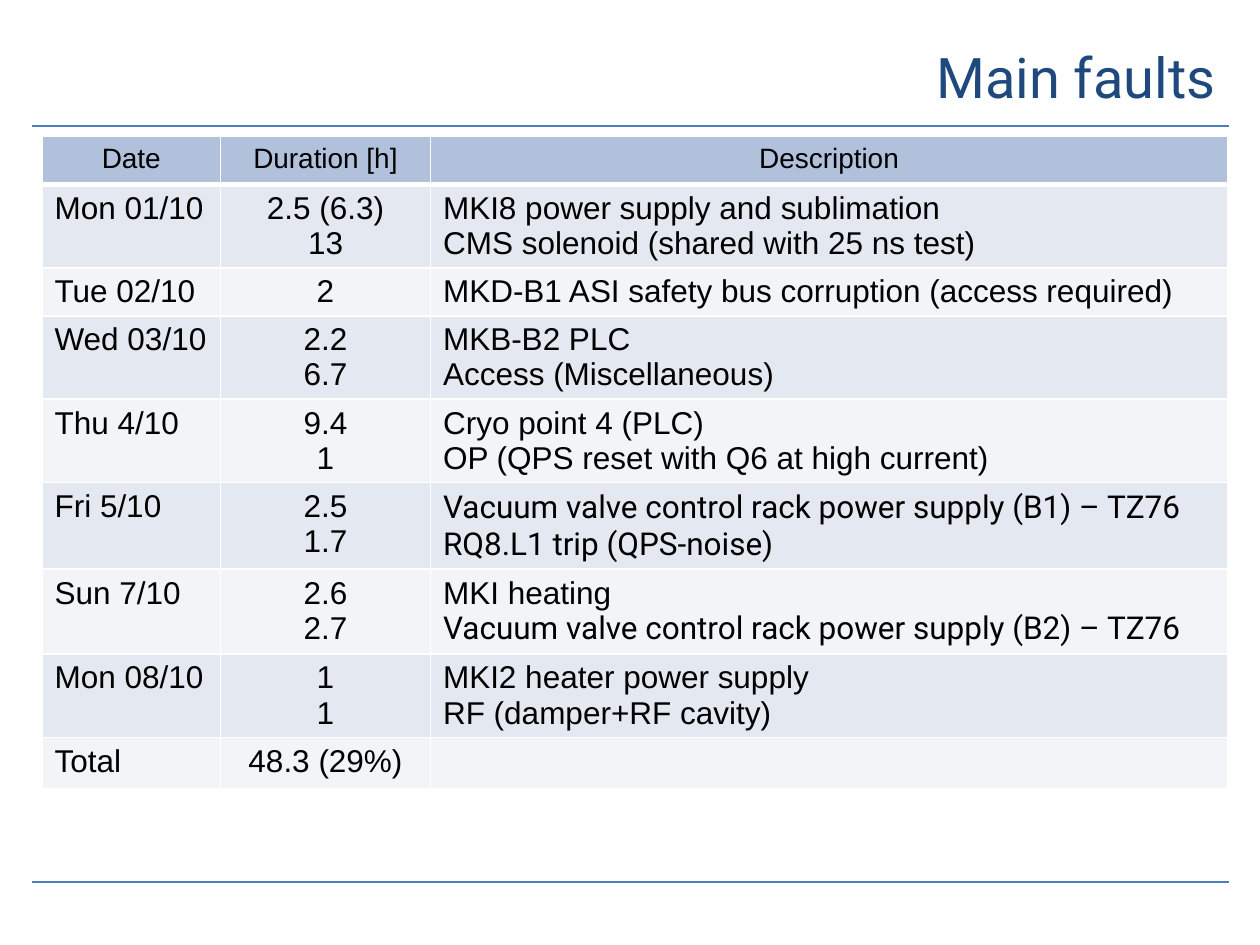
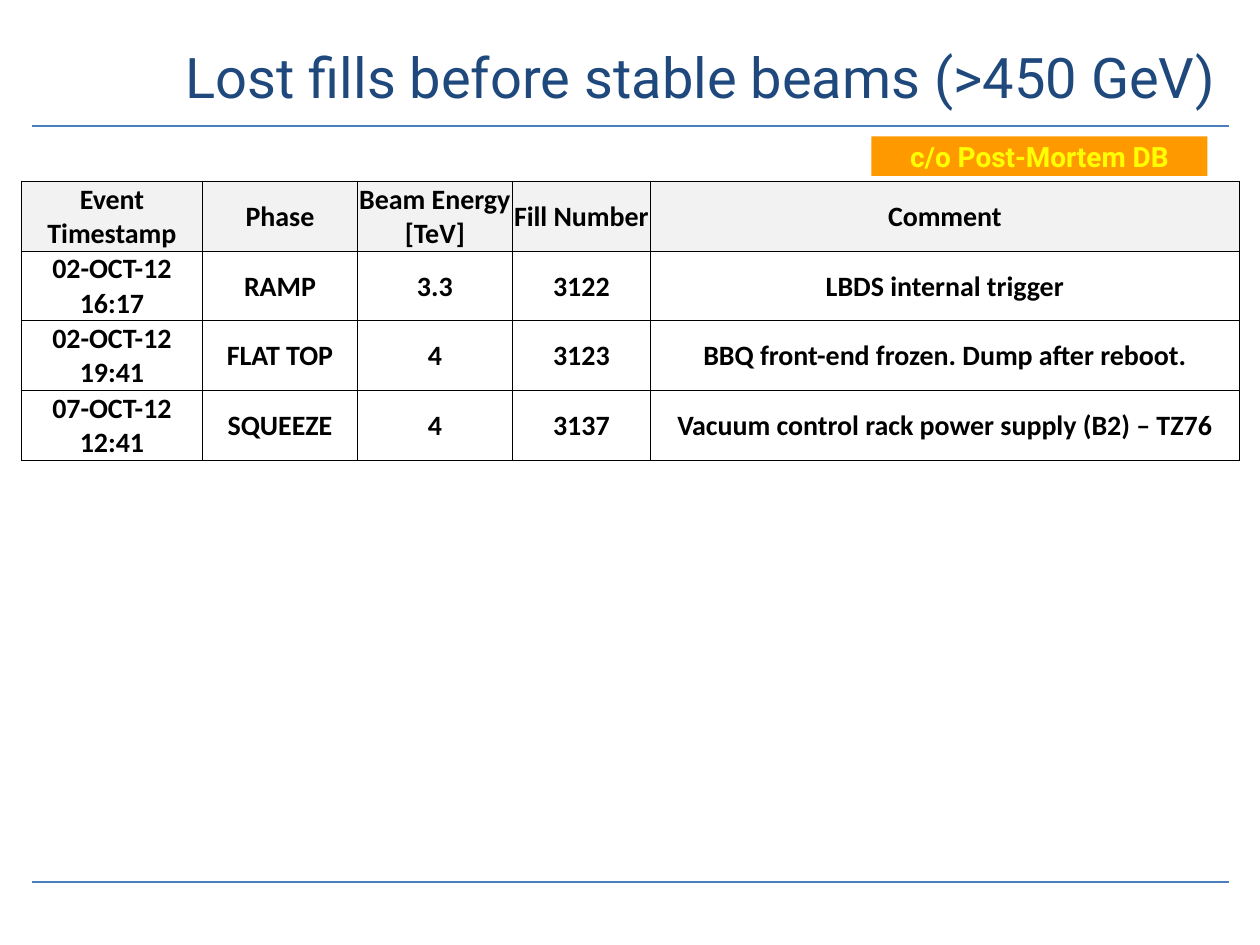
from lxml.etree import SubElement
from pptx import Presentation
from pptx.dml.color import RGBColor
from pptx.enum.shapes import MSO_CONNECTOR, MSO_SHAPE
from pptx.enum.text import MSO_ANCHOR as Anchor, PP_ALIGN as Align
from pptx.oxml import parse_xml
from pptx.oxml.ns import nsdecls, qn
from pptx.util import Pt

FAULTS = [
    ("Date", "Duration [h]", "Description"),
    ("Mon 01/10", "2.5 (6.3)\n13",
     "MKI8 power supply and sublimation\nCMS solenoid (shared with 25 ns test)"),
    ("Tue 02/10", "2", "MKD-B1 ASI safety bus corruption (access required)"),
    ("Wed 03/10", "2.2\n6.7", "MKB-B2 PLC\nAccess (Miscellaneous)"),
    ("Thu 4/10", "9.4\n1",
     "Cryo point 4 (PLC)\nOP (QPS reset with Q6 at high current)"),
    ("Fri 5/10", "2.5\n1.7",
     "Vacuum valve control rack power supply (B1) – TZ76\nRQ8.L1 trip (QPS-noise)"),
    ("Sun 7/10", "2.6\n2.7",
     "MKI heating\nVacuum valve control rack power supply (B2) – TZ76"),
    ("Mon 08/10", "1\n1", "MKI2 heater power supply\nRF (damper+RF cavity)"),
    ("Total", "48.3 (29%)", ""),
]
ROBOTO_FAULTS = ("Vacuum valve", "RQ8.L1")

LOST_FILLS = [
    ("Event Timestamp", "Phase", "Beam Energy [TeV]", "Fill Number", "Comment"),
    ("02-OCT-12 16:17", "RAMP", "3.3", "3122", "LBDS internal trigger"),
    ("02-OCT-12 19:41", "FLAT TOP", "4", "3123",
     "BBQ front-end frozen. Dump after reboot."),
    ("07-OCT-12 12:41", "SQUEEZE", "4", "3137",
     "Vacuum control rack power supply (B2) – TZ76"),
]


def rgb(hex_code):
    return RGBColor.from_string(hex_code)


class Deck:
    TITLE_COLOR, RULE_COLOR = "1F497D", "4B7EBC"
    BLACK, WHITE = "000000", "FFFFFF"
    HEADING_FONT = "Roboto"

    def __init__(self):
        self.prs = Presentation()
        self.prs.slide_width, self.prs.slide_height = Pt(720), Pt(540)
        self.slide = None

    def style(self, paragraph, font, size, color, align, bold=False):
        paragraph.alignment = align
        for run in paragraph.runs:
            run.font.name, run.font.size, run.font.bold = font, Pt(size), bold
            run.font.color.rgb = rgb(color)

    def start(self, heading, left):
        """Add a slide with its right-aligned title and the two rules."""
        self.slide = self.prs.slides.add_slide(self.prs.slide_layouts[5])
        for y in (72, 504):
            self.rule(y)
        title = self.slide.shapes.title
        title.left, title.top = Pt(left), Pt(12)
        title.width, title.height = Pt(702 - left), Pt(63)
        title.text_frame.text = heading
        title.text_frame.vertical_anchor = Anchor.MIDDLE
        self.style(title.text_frame.paragraphs[0], self.HEADING_FONT, 32,
                   self.TITLE_COLOR, Align.RIGHT)

    def rule(self, y):
        line = self.slide.shapes.add_connector(
            MSO_CONNECTOR.STRAIGHT, Pt(18), Pt(y), Pt(702), Pt(y))
        line.line.color.rgb = rgb(self.RULE_COLOR)
        line.line.width = Pt(1.5)
        SubElement(line._element.spPr, qn("a:effectLst"))

    def label(self, text, left, top, width, height, fill, color):
        box = self.slide.shapes.add_shape(
            MSO_SHAPE.RECTANGLE, Pt(left), Pt(top), Pt(width), Pt(height))
        box.shadow.inherit = False
        box.fill.solid()
        box.fill.fore_color.rgb = rgb(fill)
        box.line.fill.background()
        box.text_frame.text = text
        box.text_frame.vertical_anchor = Anchor.MIDDLE
        self.style(box.text_frame.paragraphs[0], self.HEADING_FONT, 16, color,
                   Align.CENTER, bold=True)

    def table(self, rows, left, top, widths, heights):
        frame = self.slide.shapes.add_table(
            len(rows), len(widths), Pt(left), Pt(top),
            Pt(sum(widths)), Pt(sum(heights)))
        grid = frame.table
        grid.horz_banding = False
        for column, width in zip(grid.columns, widths):
            column.width = Pt(width)
        for row, height, texts in zip(grid.rows, heights, rows):
            row.height = Pt(height)
            for cell, text in zip(row.cells, texts):
                cell.text = text
        return grid

    def paint(self, cell, fill, border, width, bottom=None):
        """Fill a cell (None for no fill) and draw its four borders."""
        if fill:
            cell.fill.solid()
            cell.fill.fore_color.rgb = rgb(fill)
        else:
            cell.fill.background()
        props = cell._tc.get_or_add_tcPr()
        for place, side in enumerate("LRTB"):
            weight = bottom if side == "B" and bottom else width
            props.insert(place, parse_xml(
                f'<a:ln{side} {nsdecls("a")} w="{Pt(weight)}"><a:solidFill>'
                f'<a:srgbClr val="{border}"/></a:solidFill></a:ln{side}>'))


def main_faults(deck):
    deck.start("Main faults", 126)
    heights = [27.4 + 20.3 * max(text.count("\n") for text in row)
               for row in FAULTS]
    grid = deck.table(FAULTS, 24, 78, (102, 120, 455.5), heights)
    for r, row in enumerate(grid.rows):
        header = r == 0
        fill = "B2C1DB" if header else ("F2F4F8", "E4E9F1")[r % 2]
        for c, cell in enumerate(row.cells):
            deck.paint(cell, fill, deck.WHITE, 1, bottom=3 if header else None)
            align = Align.CENTER if header or c == 1 else Align.LEFT
            for line in cell.text_frame.paragraphs:
                font = "Roboto" if line.text.startswith(ROBOTO_FAULTS) else "Arial"
                deck.style(line, font, 16 if header else 18, deck.BLACK, align)


def lost_fills(deck):
    deck.start("Lost fills before stable beams (>450 GeV)", 60)
    grid = deck.table(LOST_FILLS, 12.25, 103.5, (103.5, 88.5, 88.5, 79, 336.5),
                      [39.9] * len(LOST_FILLS))
    for r, row in enumerate(grid.rows):
        for cell in row.cells:
            deck.paint(cell, None if r else "F2F2F2", deck.BLACK, 0.5)
            cell.vertical_anchor = Anchor.MIDDLE
            cell.margin_left = cell.margin_right = cell.margin_top = Pt(0.7)
            cell.margin_bottom = Pt(0)
            deck.style(cell.text_frame.paragraphs[0], "Calibri", 16, deck.BLACK,
                       Align.CENTER, bold=True)
    deck.label("c/o Post-Mortem DB", 498, 78, 192, 22.5, "FF9900", "FFFF00")


def main():
    deck = Deck()
    main_faults(deck)
    lost_fills(deck)
    deck.prs.save("out.pptx")


if __name__ == "__main__":
    main()
